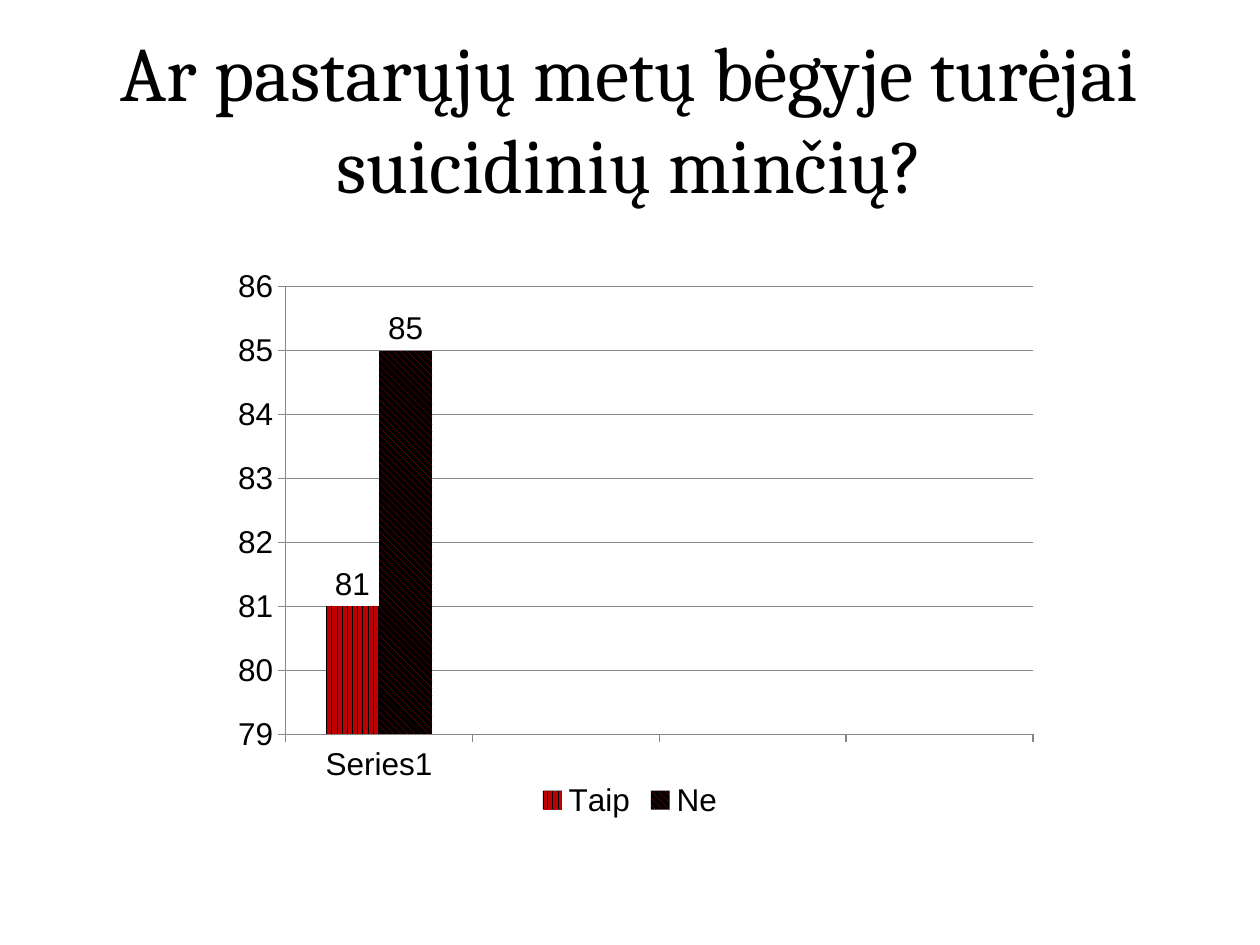
"""Build a slide with a clustered column chart of yes and no answers."""
import pptx
import pptx.chart.data
import pptx.dml.color
import pptx.enum.chart
import pptx.enum.dml
import pptx.enum.text
import pptx.oxml
import pptx.oxml.ns
import pptx.util

Pt = pptx.util.Pt


def color(hex_string):
    return pptx.dml.color.RGBColor.from_string(hex_string)


def write_text(frame, text, font="Cambria", size=44, fill="000000"):
    frame.word_wrap = True
    frame.vertical_anchor = pptx.enum.text.MSO_ANCHOR.MIDDLE
    para = frame.paragraphs[0]
    para.alignment = pptx.enum.text.PP_ALIGN.CENTER
    span = para.add_run()
    span.text = text
    span.font.name = font
    span.font.size = Pt(size)
    span.font.color.rgb = color(fill)


deck = pptx.Presentation()
deck.slide_width, deck.slide_height = Pt(720), Pt(540)
page = deck.slides.add_slide(deck.slide_layouts[5])

title = page.shapes.title
title.left, title.top, title.width, title.height = Pt(36), Pt(21.6), Pt(648), Pt(90)
title.text_frame.auto_size = pptx.enum.text.MSO_AUTO_SIZE.NONE
write_text(title.text_frame, "Ar pastarųjų metų bėgyje turėjai suicidinių minčių?")

answers = pptx.chart.data.CategoryChartData()
answers.categories = ["Series1", "", "", ""]
answers.add_series("Taip", [81, None, None, None])
answers.add_series("Ne", [85, None, None, None])
chart = page.shapes.add_chart(
    pptx.enum.chart.XL_CHART_TYPE.COLUMN_CLUSTERED,
    Pt(120), Pt(151), Pt(480), Pt(320), answers,
).chart
chart.has_title = False
chart.font.name = "Arial"
chart.font.size = Pt(18)
chart.font.color.rgb = color("000000")
chart.has_legend = True
chart.legend.position = pptx.enum.chart.XL_LEGEND_POSITION.BOTTOM
chart.legend.include_in_layout = False

value_axis = chart.value_axis
value_axis.minimum_scale, value_axis.maximum_scale = 79, 86
value_axis.major_unit = 1
value_axis.has_major_gridlines = True
for line in (
    value_axis.format.line,
    chart.category_axis.format.line,
    value_axis.major_gridlines.format.line,
):
    line.color.rgb = color("868686")
    line.width = Pt(0.75)
for axis in (value_axis, chart.category_axis):
    axis.major_tick_mark = pptx.enum.chart.XL_TICK_MARK.OUTSIDE

plot = chart.plots[0]
plot.gap_width = 150
plot.overlap = 0
plot.vary_by_categories = False
patterns = [
    pptx.enum.dml.MSO_PATTERN.DARK_VERTICAL,
    pptx.enum.dml.MSO_PATTERN.WIDE_DOWNWARD_DIAGONAL,
]
for series, pattern in zip(plot.series, patterns):
    fill = series.format.fill
    fill.patterned()
    fill.pattern = pattern
    fill.fore_color.rgb = color("C00000")
    fill.back_color.rgb = color("000000")
    series.invert_if_negative = False
    labels = series.data_labels
    labels.show_value = True
    labels.position = pptx.enum.chart.XL_LABEL_POSITION.OUTSIDE_END

plot_area = chart.element.find(".//" + pptx.oxml.ns.qn("c:plotArea"))
for layout in plot_area.findall(pptx.oxml.ns.qn("c:layout")):
    plot_area.remove(layout)
plot_area.insert(0, pptx.oxml.parse_xml(
    f'<c:layout {pptx.oxml.ns.nsdecls("c")}><c:manualLayout>'
    '<c:layoutTarget val="inner"/><c:xMode val="edge"/><c:yMode val="edge"/>'
    '<c:x val="0.09"/><c:y val="0.04"/><c:w val="0.89"/><c:h val="0.8"/>'
    '</c:manualLayout></c:layout>'
))

deck.save("out.pptx")
